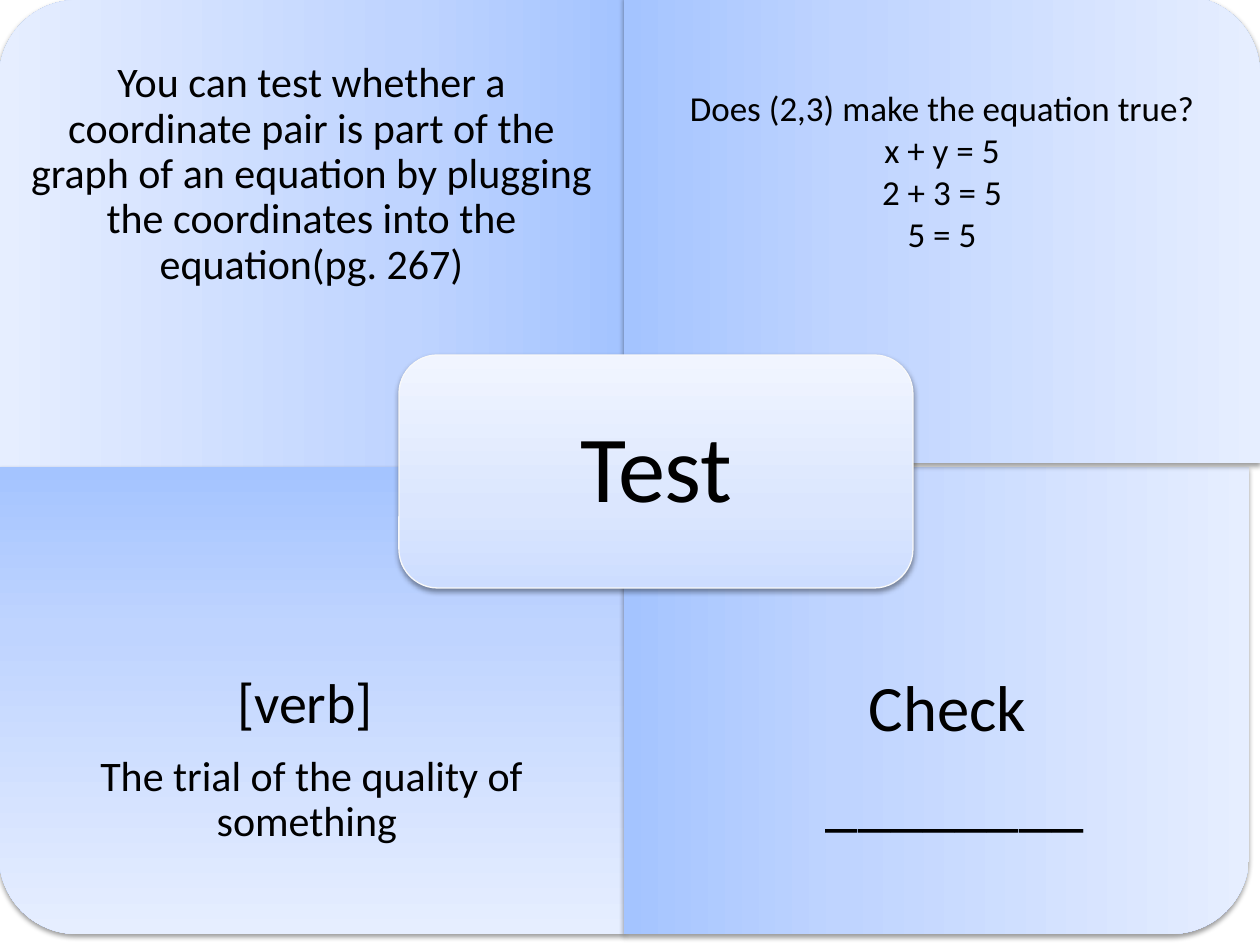
from lxml.etree import SubElement
from pptx import Presentation
from pptx.dml.color import RGBColor
from pptx.enum.shapes import MSO_SHAPE
from pptx.enum.text import MSO_ANCHOR, MSO_AUTO_SIZE, PP_ALIGN
from pptx.oxml.ns import qn
from pptx.util import Pt

PX = 914400 / 126
COLORS = {
    "text": "000000",
    "shadow": "000000",
    "edge": "F9F9F9",
    "panel": ("A4C4FF", "BFD4FF", "E6EEFF"),
    "center": ("CDDDFF", "DBE6FE", "F1F5FF"),
}


def px(n):
    return round(n * PX)


def add_node(parent, tag, **attrs):
    return SubElement(parent, qn(tag), {k: str(v) for k, v in attrs.items()})


class SlideBuilder:
    font = "Calibri"

    def __init__(self, prs):
        self.slide = prs.slides.add_slide(prs.slide_layouts[5])

    def gradient(self, sp, colors):
        sp.fill.background()
        old = sp.element.spPr.find(qn("a:noFill"))
        grad = sp.element.makeelement(qn("a:gradFill"), {"rotWithShape": "1"})
        old.getparent().replace(old, grad)
        stops = add_node(grad, "a:gsLst")
        for pos, color in zip((0, 35000, 100000), colors):
            add_node(add_node(stops, "a:gs", pos=pos), "a:srgbClr", val=color)
        add_node(grad, "a:lin", ang=16200000, scaled=1)

    def shadow(self, sp):
        sp.shadow.inherit = False
        effects = sp.element.spPr.find(qn("a:effectLst"))
        outer = add_node(effects, "a:outerShdw", blurRad=Pt(3.1), dist=Pt(1.6),
                         dir=5400000, rotWithShape=0)
        color = add_node(outer, "a:srgbClr", val=COLORS["shadow"])
        add_node(color, "a:alpha", val=38000)

    def card(self, kind, x, y, w, h, colors, edge=None):
        sp = self.slide.shapes.add_shape(kind, px(x), px(y), px(w), px(h))
        self.gradient(sp, colors)
        if edge:
            sp.line.color.rgb = RGBColor.from_string(edge)
            sp.line.width = Pt(0.75)
        else:
            sp.line.fill.background()
        self.shadow(sp)
        return sp

    def panel(self, x, y, w, h, rotation, flip=False):
        if rotation % 180:
            x, y, w, h = x + (w - h) / 2, y + (h - w) / 2, h, w
        sp = self.card(MSO_SHAPE.ROUND_1_RECTANGLE, x, y, w, h, COLORS["panel"])
        sp.rotation = rotation
        if flip:
            sp.element.spPr.find(qn("a:xfrm")).set("flipH", "1")

    def fill_text(self, sp, lines, inset, tight=True):
        tf = sp.text_frame
        tf.word_wrap = True
        tf.auto_size = MSO_AUTO_SIZE.NONE
        tf.vertical_anchor = MSO_ANCHOR.MIDDLE
        tf.margin_left = tf.margin_right = px(inset)
        tf.margin_top = tf.margin_bottom = px(inset)
        for i, (text, size) in enumerate(lines):
            p = tf.add_paragraph() if i else tf.paragraphs[0]
            p.text = text
            p.alignment = PP_ALIGN.CENTER
            if tight:
                p.line_spacing = 0.9
                p.space_after = Pt(round(size * 0.35, 1))
            for r in p.runs:
                r.font.name = self.font
                r.font.size = Pt(size)
                r.font.color.rgb = RGBColor.from_string(COLORS["text"])

    def text(self, x, y, w, h, lines, inset, tight=True):
        sp = self.slide.shapes.add_textbox(px(x), px(y), px(w), px(h))
        self.fill_text(sp, lines, inset, tight)

    def title(self, x, y, w, h, text, size, inset):
        sp = self.slide.shapes.title
        sp.left, sp.top, sp.width, sp.height = px(x), px(y), px(w), px(h)
        self.fill_text(sp, [(text, size)], inset)
        sp.element.getparent().append(sp.element)


def main():
    prs = Presentation()
    prs.slide_width, prs.slide_height = px(1260), px(945)
    s = SlideBuilder(prs)

    s.panel(-1, 0, 625, 467, 270)
    s.text(-1, 0, 625, 350, [
        ("You can test whether a coordinate pair is part of the graph of an "
         "equation by plugging the coordinates into the equation(pg. 267)", 24),
    ], 24)

    s.panel(-1, 467, 625, 467, 180)
    s.text(-1, 585, 625, 350, [
        ("[verb] ", 32),
        ("The trial of the quality of something ", 24),
    ], 32)

    s.panel(624, 467, 625, 467, 90)
    s.text(635, 582, 625, 350, [("Check", 37), (" ________", 37)], 37)

    s.panel(624, -4, 636, 467, 90, flip=True)
    equation = ("Does (2,3) make the equation true?", "x + y = 5", "2 + 3 = 5", "5 = 5")
    s.text(624, -4, 636, 350, [(line, 20) for line in equation], 24, tight=False)

    s.card(MSO_SHAPE.ROUNDED_RECTANGLE, 399, 355, 514, 233, COLORS["center"], COLORS["edge"])
    s.title(415, 367, 483, 210, "Test", 54, 29)

    prs.save("out.pptx")


if __name__ == "__main__":
    main()
